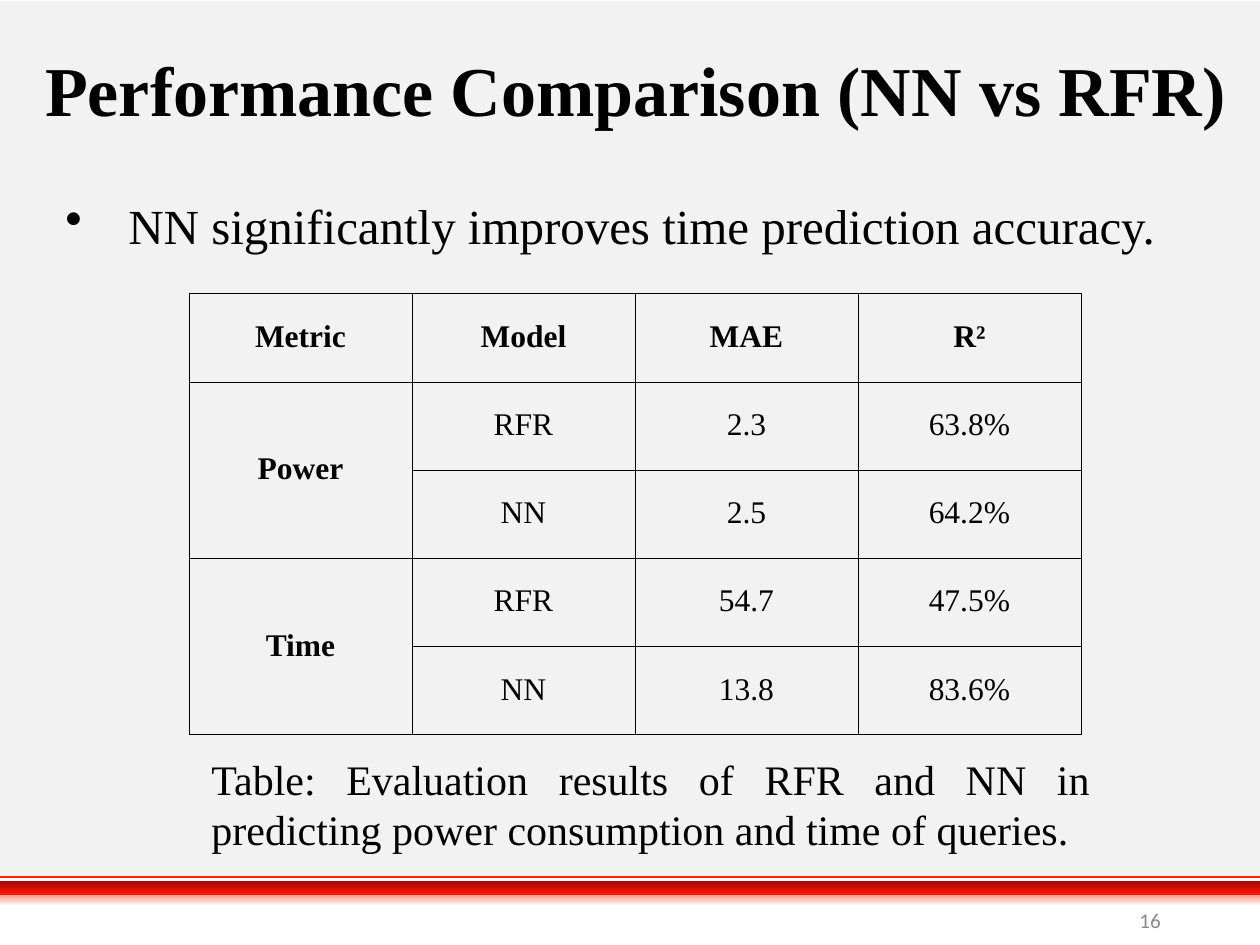
from lxml.etree import SubElement
from pptx import Presentation
from pptx.dml.color import RGBColor
from pptx.enum.shapes import MSO_CONNECTOR as Connector, MSO_SHAPE as Shape
from pptx.enum.text import MSO_ANCHOR as Anchor, PP_ALIGN as Align
from pptx.oxml.ns import qn
from pptx.util import Inches, Pt

COLORS = {
    "panel": "F2F2F2", "text": "000000", "number": "898989",
    "red": "FF2400", "white": "FFFFFF", "dark red": "A00800",
    "bright red": "FF1600", "border": "000000",
}


def color(name):
    return RGBColor.from_string(COLORS[name])


class SlideBuilder:
    font = "Times New Roman"
    border_width = 0.25

    def __init__(self, slide):
        self.slide = slide
        self.shapes = slide.shapes

    def style(self, paragraph, size, align, bold=False, font=None, ink="text"):
        paragraph.alignment = align
        paragraph.font.size = Pt(size)
        paragraph.font.bold = bold
        paragraph.font.name = font or self.font
        paragraph.font.color.rgb = color(ink)

    def band(self, top, height, *fills):
        """Full-width rectangle: one fill is solid, two run top to bottom."""
        band = self.shapes.add_shape(
            Shape.RECTANGLE, 0, Inches(top), Inches(10), Inches(height))
        band.shadow.inherit = False
        band.line.fill.background()
        if len(fills) == 1:
            band.fill.solid()
            band.fill.fore_color.rgb = color(fills[0])
        else:
            band.fill.gradient()
            band.fill.gradient_angle = 270
            for stop, name in zip(band.fill.gradient_stops, fills):
                stop.color.rgb = color(name)

    def rule(self, y, name, width):
        rule = self.shapes.add_connector(
            Connector.STRAIGHT, 0, Inches(y), Inches(10), Inches(y))
        rule.line.color.rgb = color(name)
        rule.line.width = Pt(width)
        SubElement(rule._element.spPr, qn("a:effectLst"))

    def text(self, box, words, size, align, anchor=Anchor.TOP, bullet=False, **look):
        frame = self.shapes.add_textbox(*map(Inches, box)).text_frame
        frame.word_wrap = True
        frame.vertical_anchor = anchor
        paragraph = frame.paragraphs[0]
        paragraph.text = words
        if bullet:
            props = paragraph._p.get_or_add_pPr()
            props.set("marL", str(Inches(0.5)))
            props.set("indent", str(-Inches(0.5)))
            SubElement(props, qn("a:buChar"), char="•")
        self.style(paragraph, size, align, **look)

    def borders(self, cell):
        props = cell._tc.get_or_add_tcPr()
        for side in ("lnL", "lnR", "lnT", "lnB"):
            line = SubElement(props, qn(f"a:{side}"), w=str(Pt(self.border_width)))
            fill = SubElement(line, qn("a:solidFill"))
            SubElement(fill, qn("a:srgbClr"), val=COLORS["border"])

    def table(self, box, rows, merges, size):
        table = self.shapes.add_table(
            len(rows), len(rows[0]), *map(Inches, box)).table
        table.first_row = table.horz_banding = False
        for r, row in enumerate(rows):
            for c, words in enumerate(row):
                cell = table.cell(r, c)
                self.borders(cell)
                cell.fill.background()
                cell.vertical_anchor = Anchor.MIDDLE
                paragraph = cell.text_frame.paragraphs[0]
                paragraph.text = words
                paragraph.line_spacing = 0.93
                self.style(paragraph, size, Align.CENTER, bold=r == 0 or c == 0)
        for first, last in merges:
            table.cell(first, 0).merge(table.cell(last, 0))


def main():
    deck = Presentation()
    deck.slide_width, deck.slide_height = Inches(10), Inches(7.5)
    page = SlideBuilder(deck.slides.add_slide(deck.slide_layouts[6]))

    # Backdrop and footer stripes
    page.band(0.01, 6.96, "panel")
    page.band(7.01, 0.18, "red", "white")
    page.rule(6.96, "red", 0.75)
    page.band(6.99, 0.11, "dark red", "bright red")

    # Title and key message
    page.text((0.17, 0.08, 9.75, 1.25), "Performance Comparison (NN vs RFR)",
              40, Align.CENTER, Anchor.MIDDLE, bold=True)
    page.text((0.42, 1.5, 9.25, 0.6),
              "NN significantly improves time prediction accuracy.",
              28, Align.JUSTIFY, bullet=True)

    # Results table: each metric spans its two models
    results = [
        ("Metric", "Model", "MAE", "R²"),
        ("Power", "RFR", "2.3", "63.8%"),
        ("", "NN", "2.5", "64.2%"),
        ("Time", "RFR", "54.7", "47.5%"),
        ("", "NN", "13.8", "83.6%"),
    ]
    page.table((1.5, 2.33, 7.08, 3.5), results, [(1, 2), (3, 4)], 18)

    # Slide number and table caption
    page.text((7.06, 7.1, 2.25, 0.4), "16", 12, Align.RIGHT, Anchor.MIDDLE,
              font="Calibri", ink="number")
    page.text((1.58, 5.93, 7.17, 0.9),
              "Table: Evaluation results of RFR and NN in predicting power "
              "consumption and time of queries.", 24, Align.JUSTIFY)

    deck.save("out.pptx")


if __name__ == "__main__":
    main()
